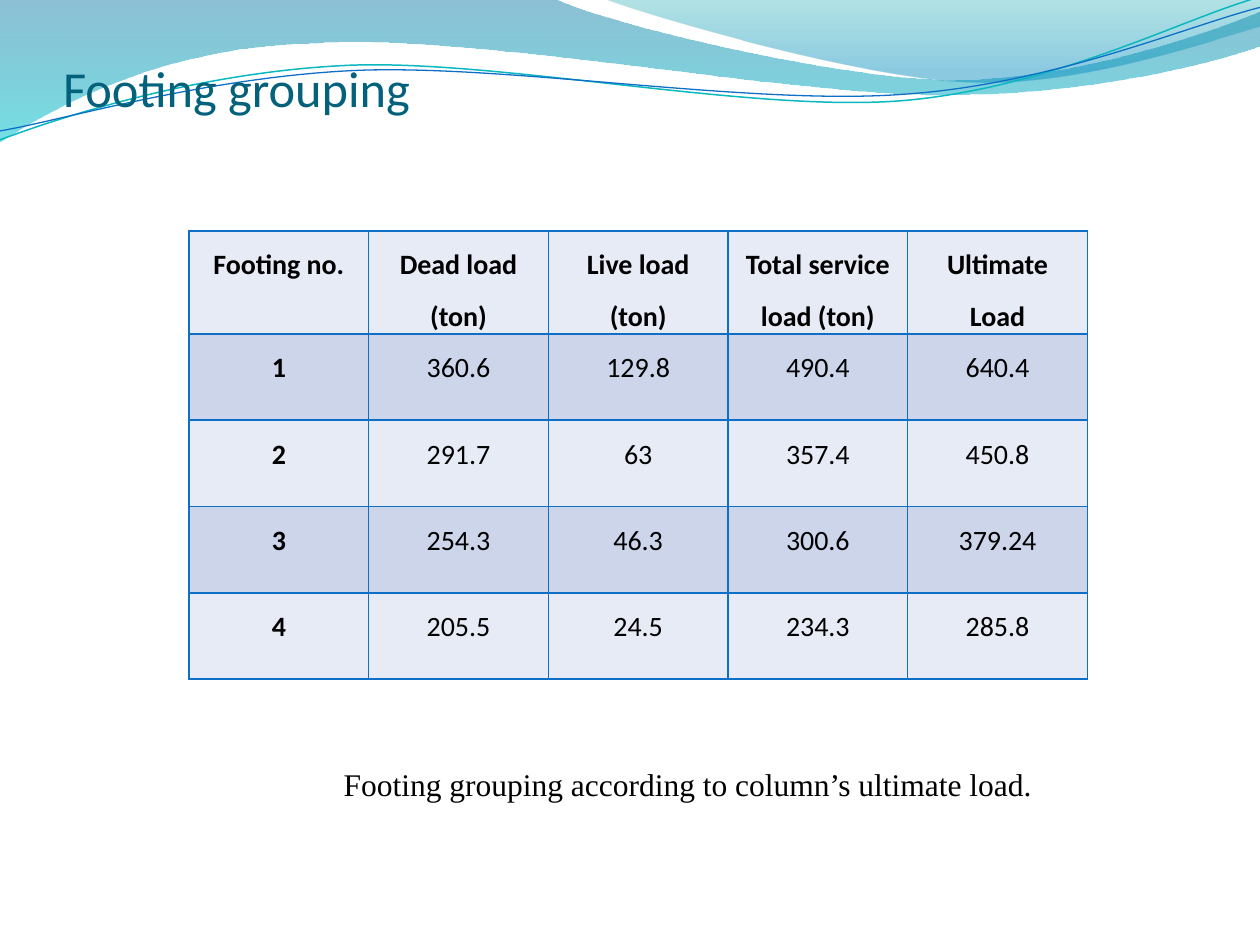
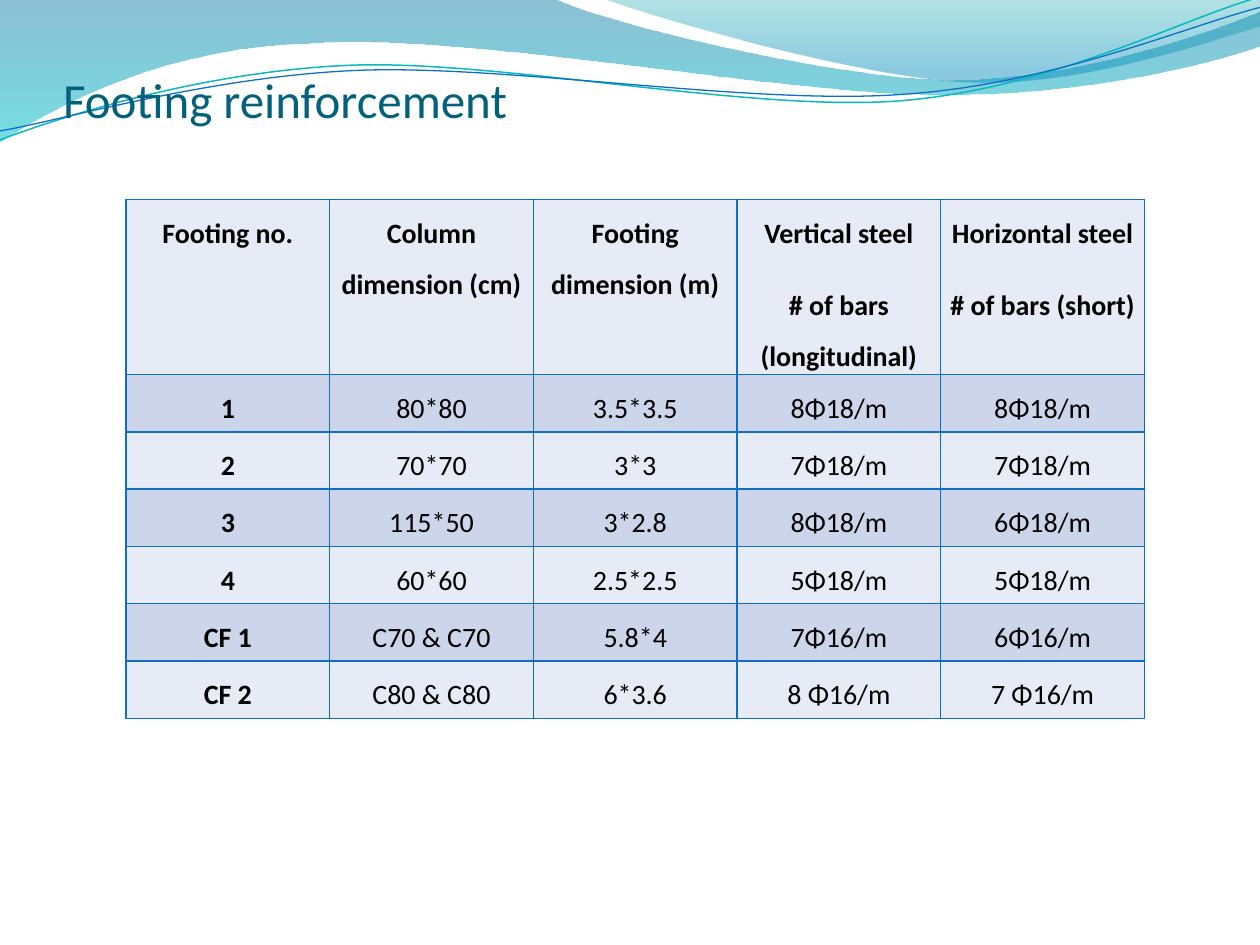
from dataclasses import dataclass
from typing import NamedTuple

from lxml.etree import SubElement
from pptx import Presentation
from pptx.dml.color import RGBColor
from pptx.enum.text import MSO_ANCHOR, MSO_AUTO_SIZE, PP_ALIGN
from pptx.oxml.ns import qn
from pptx.util import Cm, Pt

BODY_FONT = "Calibri"
CAPTION_FONT = "Times New Roman"
TITLE_COLOUR = "04617B"
TEXT_COLOUR = "000000"
GRID_COLOUR = "0F6FC6"
ROW_FILLS = ("E7EBF5", "CCD5EA")


class GradientStop(NamedTuple):
    position: float
    colour: str
    opacity: int


@dataclass
class Wave:
    """Outline in centimetres: two numbers are a straight step, six a Bézier curve."""
    start: tuple
    steps: list
    gradient: tuple = ()
    line_colour: str = ""
    line_width: float = 0
    rotation: float = 0


@dataclass
class FootingSlide:
    title: str
    title_size: float
    title_height: float
    left: float
    top: float
    table_width: float
    header_height: float
    body_height: float
    rows: list
    caption: str = ""


WAVES = [
    Wave((0, 0),
         [(11.18, -0.03), (12.09, 0.43, 16.87, 1.6, 19.25, 1.6),
          (21.67, 1.6, 24.33, 0.66, 25.4, 0.23), (25.43, 0.91),
          (24.97, 1.12, 22.1, 1.93, 18.95, 1.91),
          (15.8, 1.91, 9.7, 0.71, 6.53, 0.86),
          (3.28, 0.91, 1.17, 2.11, -0.03, 2.87), (0, 0)],
         gradient=(GradientStop(0, "0074A1", 45), GradientStop(1, "00C6CF", 55))),
    Wave((12.17, -0.03),
         [(12.93, 0.28, 17.32, 1.57, 19.53, 1.65),
          (21.74, 1.75, 24.41, 0.81, 25.4, 0.53), (25.4, 0), (12.17, -0.03)],
         gradient=(GradientStop(0, "00A1A9", 30), GradientStop(0.8, "008BBF", 45))),
    Wave((-0.05, 2.22),
         [(1.19, 1.82, 4.02, 1.04, 7.05, 1.05),
          (10.05, 1.07, 15.02, 2.37, 18.08, 2.29),
          (21.13, 2.2, 23.86, 0.91, 25.41, 0.55)],
         line_colour="0AB8BF", line_width=0.85, rotation=357.3),
    Wave((-0.04, 2.04),
         [(1.16, 1.9, 4.17, 1.15, 7.2, 1.16),
          (10.25, 1.18, 15.13, 2.25, 18.19, 2.16),
          (21.21, 2.1, 23.93, 1.06, 25.45, 0.75)],
         line_colour=GRID_COLOUR, line_width=0.75, rotation=357.3),
]

FOOTING_SLIDES = [
    FootingSlide(
        "Footing grouping", 28.8, 1.31, 3.81, 4.66, 18.11, 1.74, 6.96,
        [("Footing no.", "Dead load (ton)", "Live load (ton)",
          "Total service load (ton)", "Ultimate Load"),
         ("1", "360.6", "129.8", "490.4", "640.4"),
         ("2", "291.7", "63", "357.4", "450.8"),
         ("3", "254.3", "46.3", "300.6", "379.24"),
         ("4", "205.5", "24.5", "234.3", "285.8")],
        "Footing grouping according to column’s ultimate load."),
    FootingSlide(
        "Footing reinforcement", 28, 1.52, 2.54, 4.02, 20.53, 3.18, 6.93,
        [("Footing no.", "Column dimension (cm)", "Footing dimension (m)",
          "Vertical steel\n# of bars (longitudinal)",
          "Horizontal steel\n# of bars (short)"),
         ("1", "80*80", "3.5*3.5", "8Φ18/m", "8Φ18/m"),
         ("2", "70*70", "3*3", "7Φ18/m", "7Φ18/m"),
         ("3", "115*50", "3*2.8", "8Φ18/m", "6Φ18/m"),
         ("4", "60*60", "2.5*2.5", "5Φ18/m", "5Φ18/m"),
         ("CF 1", "C70 & C70", "5.8*4", "7Φ16/m", "6Φ16/m"),
         ("CF 2", "C80 & C80", "6*3.6", "8 Φ16/m", "7 Φ16/m")]),
]


def rgb(colour: str) -> RGBColor:
    return RGBColor.from_string(colour)


def place(shape, left: float, top: float, width: float, height: float) -> None:
    shape.left, shape.top = Cm(left), Cm(top)
    shape.width, shape.height = Cm(width), Cm(height)


def format_runs(paragraph, font_name: str, size: float, colour: str,
                bold: bool = False) -> None:
    for run in paragraph.runs:
        run.font.name = font_name
        run.font.size = Pt(size)
        run.font.bold = bold
        run.font.color.rgb = rgb(colour)


def bend_segments(shape, steps: list) -> None:
    """Turn each three straight segments that hold a curve's points into one curve."""
    segments = iter(list(shape.element.iter(qn("a:lnTo"))))
    for step in steps:
        first = next(segments)
        if len(step) == 6:
            first.tag = qn("a:cubicBezTo")
            for _ in range(2):
                extra = next(segments)
                first.append(extra[0])
                extra.getparent().remove(extra)


def fill_gradient(shape, gradient: tuple) -> None:
    """Fill from top to bottom with translucent colours."""
    shape.fill.gradient()
    shape.fill.gradient_angle = 270
    for stop, wanted in zip(shape.fill.gradient_stops, gradient):
        stop.position = wanted.position
        stop.color.rgb = rgb(wanted.colour)
    for colour, wanted in zip(shape.element.iter(qn("a:srgbClr")), gradient):
        SubElement(colour, qn("a:alpha"), val=str(wanted.opacity * 1000))


def draw_wave(slide, wave: Wave):
    points = [(Cm(step[i]), Cm(step[i + 1]))
              for step in wave.steps for i in range(0, len(step), 2)]
    builder = slide.shapes.build_freeform(Cm(wave.start[0]), Cm(wave.start[1]))
    builder.add_line_segments(points, close=bool(wave.gradient))
    shape = builder.convert_to_shape()
    bend_segments(shape, wave.steps)
    shape.rotation = wave.rotation
    shape.shadow.inherit = False
    if wave.gradient:
        fill_gradient(shape, wave.gradient)
        shape.line.fill.background()
    else:
        shape.fill.background()
        shape.line.color.rgb = rgb(wave.line_colour)
        shape.line.width = Pt(wave.line_width)
    return shape


def move_waves_to_layout(slide, layout) -> None:
    """Freeforms can only be built on a slide, so build them there and move them."""
    for placeholder in list(layout.placeholders)[1:]:
        layout.shapes.element.remove(placeholder.element)
    for shape in [draw_wave(slide, wave) for wave in WAVES]:
        layout.shapes.element.append(shape.element)


def set_title(slide, content: FootingSlide) -> None:
    title = slide.shapes.title
    place(title, 1.27, 1.07, 22.86, content.title_height)
    frame = title.text_frame
    frame.text = content.title
    frame.auto_size = MSO_AUTO_SIZE.NONE
    frame.vertical_anchor = MSO_ANCHOR.BOTTOM
    frame.margin_left = frame.margin_right = frame.margin_bottom = 0
    frame.margin_top = Cm(0.13)
    frame.paragraphs[0].alignment = PP_ALIGN.LEFT
    format_runs(frame.paragraphs[0], BODY_FONT, content.title_size, TITLE_COLOUR)


def set_borders(cell) -> None:
    properties = cell._tc.get_or_add_tcPr()
    for side in ("a:lnL", "a:lnR", "a:lnT", "a:lnB"):
        border = SubElement(properties, qn(side), w=str(Pt(1)))
        fill = SubElement(border, qn("a:solidFill"))
        SubElement(fill, qn("a:srgbClr"), val=GRID_COLOUR)


def format_cell(cell, text: str, fill: str, bold: bool) -> None:
    set_borders(cell)
    cell.fill.solid()
    cell.fill.fore_color.rgb = rgb(fill)
    cell.margin_left = cell.margin_right = Cm(0.19)
    cell.margin_top = cell.margin_bottom = 0
    cell.text_frame.text = text
    for paragraph in cell.text_frame.paragraphs:
        paragraph.alignment = PP_ALIGN.CENTER
        paragraph.line_spacing = 1.5
        paragraph.space_before = paragraph.space_after = Pt(6)
        format_runs(paragraph, BODY_FONT, 16, TEXT_COLOUR, bold)


def add_footing_table(slide, content: FootingSlide) -> None:
    row_count, column_count = len(content.rows), len(content.rows[0])
    table = slide.shapes.add_table(
        row_count, column_count, Cm(content.left), Cm(content.top),
        Cm(content.table_width), Cm(content.header_height + content.body_height)).table
    for column in table.columns:
        column.width = Cm(content.table_width / column_count)
    for row in table.rows:
        row.height = Cm(content.body_height / (row_count - 1))
    table.rows[0].height = Cm(content.header_height)
    for r, texts in enumerate(content.rows):
        for c, text in enumerate(texts):
            format_cell(table.cell(r, c), text, ROW_FILLS[r % 2], r == 0 or c == 0)


def add_caption(slide, caption: str) -> None:
    frame = slide.shapes.add_textbox(Cm(4.88), Cm(15.29), Cm(17.98), Cm(1.8)).text_frame
    frame.word_wrap = True
    frame.text = caption
    frame.paragraphs[0].alignment = PP_ALIGN.CENTER
    format_runs(frame.paragraphs[0], CAPTION_FONT, 18, TEXT_COLOUR)


def main() -> None:
    deck = Presentation()
    deck.slide_width, deck.slide_height = Cm(25.4), Cm(19.05)
    layout = deck.slide_layouts.get_by_name("Title Only")
    for content in FOOTING_SLIDES:
        slide = deck.slides.add_slide(layout)
        set_title(slide, content)
        add_footing_table(slide, content)
        if content.caption:
            add_caption(slide, content.caption)
    move_waves_to_layout(deck.slides[0], layout)
    deck.save("out.pptx")


if __name__ == "__main__":
    main()
